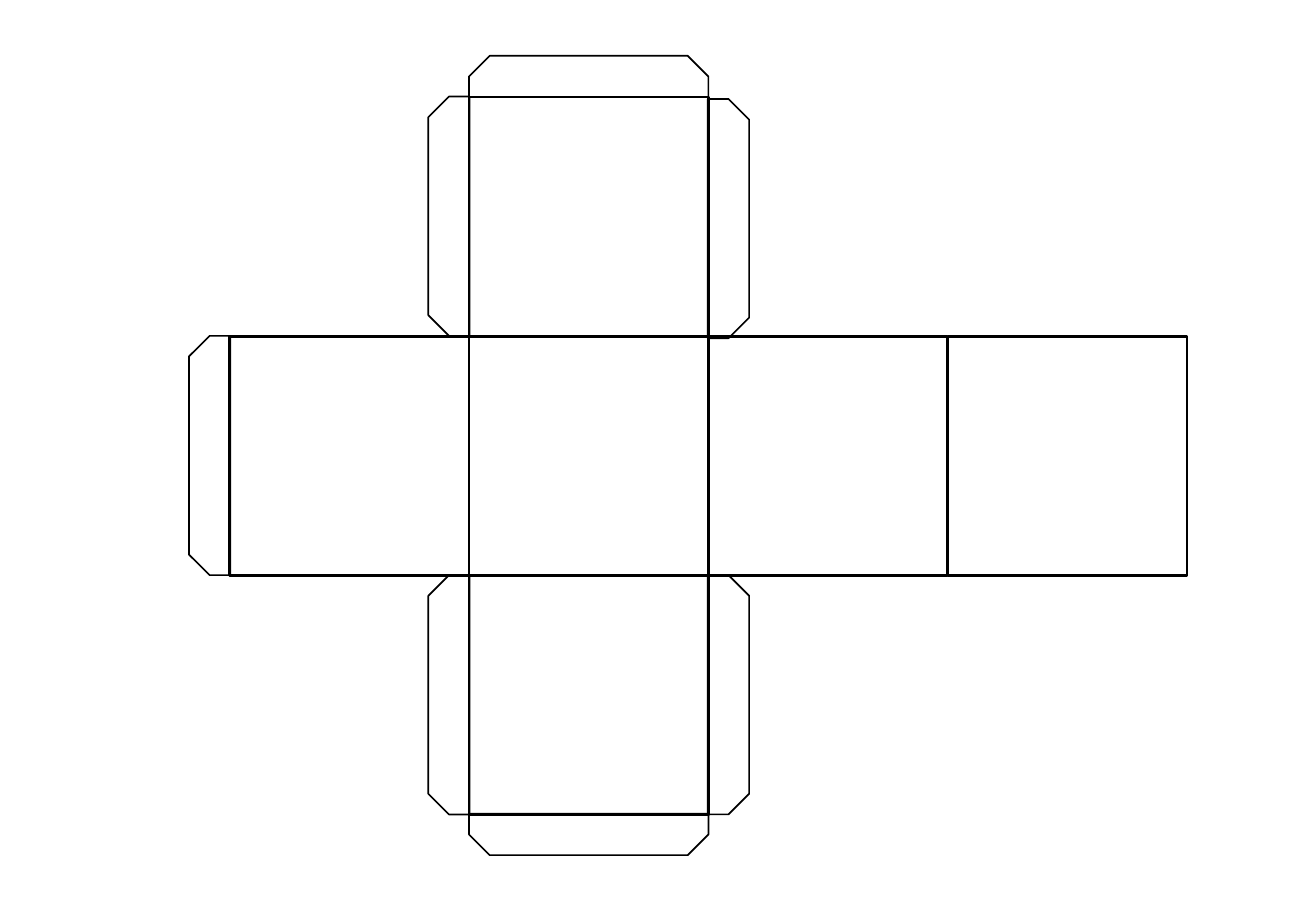
"""Draw the cut-out net of a cube with its glue flaps."""
import pptx
import pptx.dml.color
import pptx.enum.shapes
import pptx.util

PX = 9144
COLORS = {"outline": "000000"}
SIDE, FLAP = 197, 34
NET_LEFT, NET_TOP = 189, 80
PRESETS = pptx.enum.shapes.MSO_SHAPE

presentation = pptx.Presentation()
presentation.slide_width = 1083 * PX
presentation.slide_height = 750 * PX
slide = presentation.slides.add_slide(presentation.slide_layouts[6])
net = slide.shapes.add_group_shape()


def add_panel(preset, left, top, height, weight):
    panel = net.shapes.add_shape(preset, left * PX, top * PX, SIDE * PX, height * PX)
    panel.shadow.inherit = False
    panel.fill.background()
    panel.line.color.rgb = pptx.dml.color.RGBColor.from_string(COLORS["outline"])
    panel.line.width = pptx.util.Pt(weight)
    return panel


for column, row in [(0, 1), (1, 1), (2, 1), (3, 1), (1, 0), (1, 2)]:
    add_panel(PRESETS.RECTANGLE, NET_LEFT + column * SIDE, NET_TOP + row * SIDE, SIDE, 1.5)

flap_reach = (SIDE + FLAP) // 2
directions = {270: (-1, 0), 180: (0, 1), 0: (0, -1), 90: (1, 0)}
flaps = [
    (0, 1, 270, 0),
    (1, 0, 270, 0),
    (1, 2, 270, 0),
    (1, 2, 180, 0),
    (1, 0, 0, 0),
    (1, 0, 90, 2),
    (1, 2, 90, 0),
]
for column, row, rotation, drop in flaps:
    across, down = directions[rotation]
    left = NET_LEFT + column * SIDE + across * flap_reach
    top = NET_TOP + row * SIDE + (SIDE - FLAP) // 2 + down * flap_reach + drop
    flap = add_panel(PRESETS.SNIP_2_SAME_RECTANGLE, left, top, FLAP, 1)
    flap.rotation = rotation
    flap.adjustments[0] = 0.5
    flap.adjustments[1] = 0

presentation.save("out.pptx")
